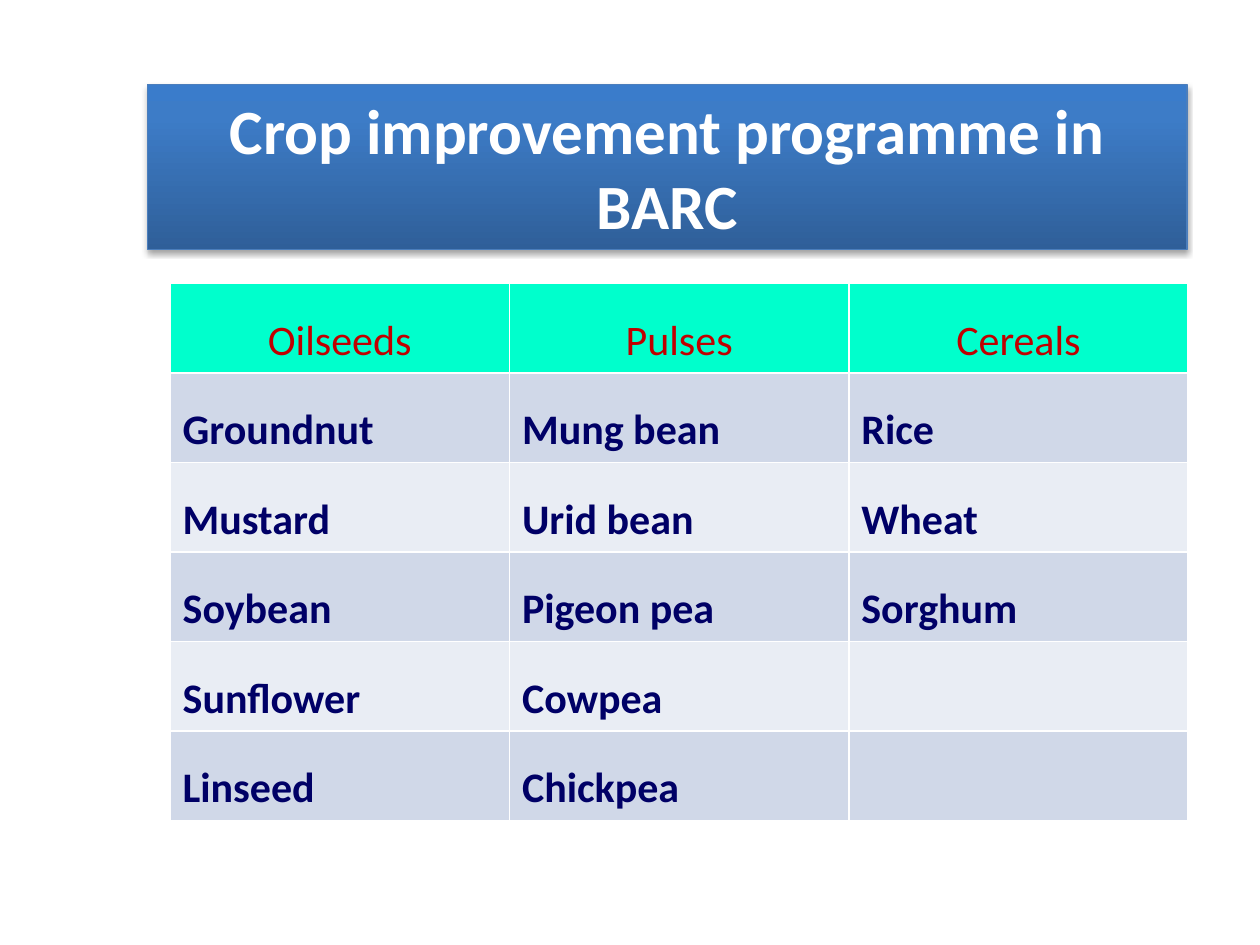
"""Build the slide on the crop improvement programme."""
from copy import deepcopy
from dataclasses import dataclass

from lxml.etree import SubElement
from pptx import Presentation
from pptx.dml.color import RGBColor as Rgb
from pptx.enum.shapes import MSO_SHAPE as Shape
from pptx.enum.text import MSO_ANCHOR as Anchor, PP_ALIGN as Align
from pptx.oxml.ns import qn
from pptx.util import Inches, Pt


@dataclass(frozen=True)
class Theme:
    font: str = "Calibri"
    title_size: int = 36
    table_size: int = 24
    title_text: str = "FFFFFF"
    header_text: str = "C00000"
    crop_text: str = "000066"
    header_fill: str = "00FFCC"
    bands: tuple = ("D0D8E8", "E9EDF4")
    banner_outline: str = "4B7EBC"
    banner_stops: tuple = ((0, "2F5F99"), (0.8, "3D7CC7"), (1, "3A7CCB"))


class SlideBuilder:
    def __init__(self, slide, theme):
        self.slide = slide
        self.theme = theme

    def style_text(self, paragraph, size, color, bold, align):
        paragraph.alignment = align
        for run in paragraph.runs:
            run.font.name = self.theme.font
            run.font.size = Pt(size)
            run.font.bold = bold
            run.font.color.rgb = Rgb.from_string(color)

    def fill_gradient(self, fill, stops):
        fill.gradient()
        fill.gradient_angle = 90
        stop_list = fill.gradient_stops[0]._gs.getparent()
        while len(stop_list) < len(stops):
            stop_list.append(deepcopy(stop_list[0]))
        for stop, (position, color) in zip(fill.gradient_stops, stops):
            stop.position = position
            stop.color.rgb = Rgb.from_string(color)

    def add_shadow(self, shape):
        shape.shadow.inherit = False
        effects = shape._element.spPr.find(qn("a:effectLst"))
        shadow = SubElement(effects, qn("a:outerShdw"), blurRad=str(Pt(3.1)),
                            dist=str(Pt(1.8)), dir="5400000", rotWithShape="0")
        color = SubElement(shadow, qn("a:srgbClr"), val="000000")
        SubElement(color, qn("a:alpha"), val="35000")

    def add_banner(self, text, left, top, width, height):
        theme = self.theme
        banner = self.slide.shapes.add_shape(
            Shape.RECTANGLE, Inches(left), Inches(top), Inches(width), Inches(height))
        self.fill_gradient(banner.fill, theme.banner_stops)
        banner.line.color.rgb = Rgb.from_string(theme.banner_outline)
        banner.line.width = Pt(0.75)
        self.add_shadow(banner)
        frame = banner.text_frame
        frame.text = text
        frame.word_wrap = True
        frame.vertical_anchor = Anchor.MIDDLE
        self.style_text(frame.paragraphs[0], theme.title_size, theme.title_text,
                        True, Align.CENTER)

    def add_table(self, rows, left, top, width, height):
        theme = self.theme
        table = self.slide.shapes.add_table(
            len(rows), len(rows[0]), Inches(left), Inches(top),
            Inches(width), Inches(height)).table
        for row_index, row in enumerate(rows):
            header = row_index == 0
            fill = theme.header_fill if header else theme.bands[(row_index - 1) % 2]
            color = theme.header_text if header else theme.crop_text
            align = Align.CENTER if header else Align.LEFT
            for column_index, crop in enumerate(row):
                cell = table.cell(row_index, column_index)
                cell.fill.solid()
                cell.fill.fore_color.rgb = Rgb.from_string(fill)
                if crop:
                    cell.text_frame.text = crop
                    paragraph = cell.text_frame.paragraphs[0]
                    paragraph.line_spacing = 1.5
                    self.style_text(paragraph, theme.table_size, color,
                                    not header, align)


def main():
    deck = Presentation()
    deck.slide_width, deck.slide_height = Inches(10), Inches(7.5)
    builder = SlideBuilder(deck.slides.add_slide(deck.slide_layouts[6]), Theme())
    crops = [
        ("Oilseeds", "Pulses", "Cereals"),
        ("Groundnut", "Mung bean", "Rice"),
        ("Mustard", "Urid bean", "Wheat"),
        ("Soybean", "Pigeon pea", "Sorghum"),
        ("Sunflower", "Cowpea", ""),
        ("Linseed", "Chickpea", ""),
    ]
    builder.add_table(crops, 1.35, 2.25, 8.08, 4.2)
    builder.add_banner("Crop improvement programme in BARC", 1.17, 0.67, 8.25, 1.31)
    deck.save("out.pptx")


if __name__ == "__main__":
    main()
